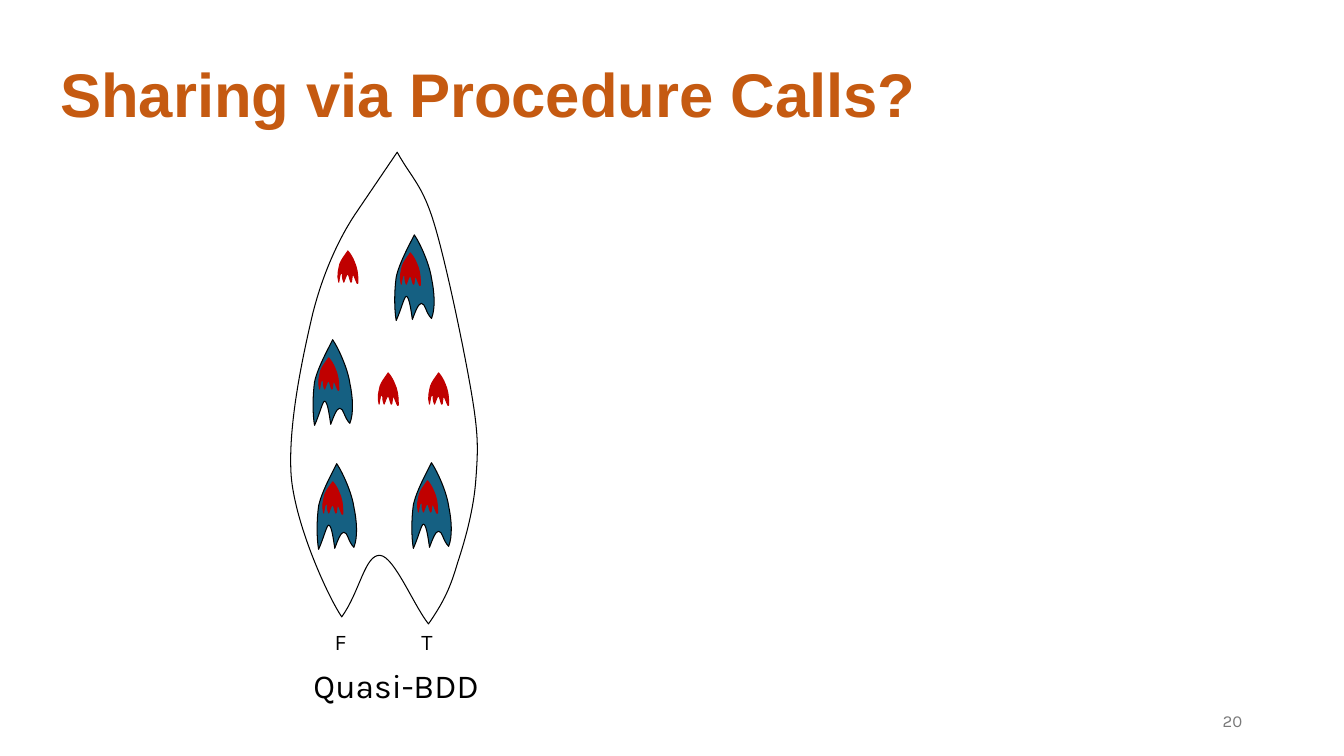
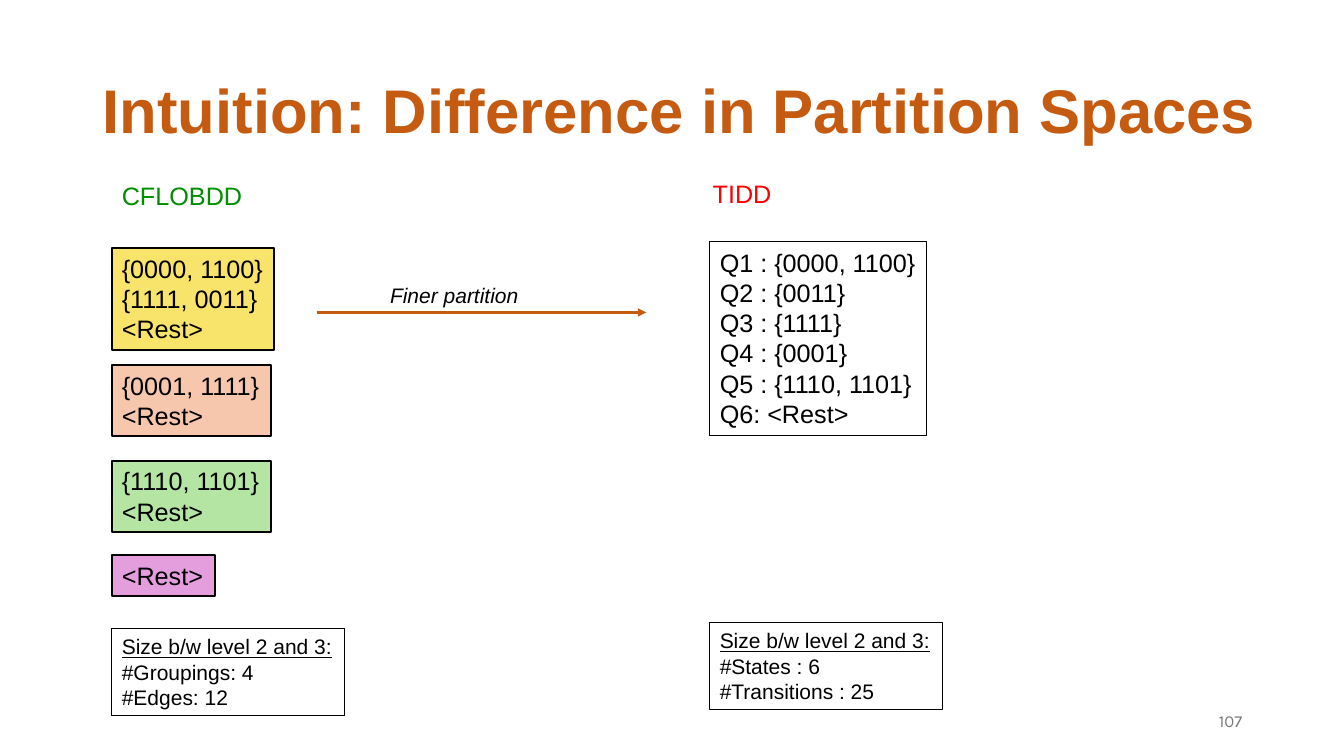
from dataclasses import dataclass, field
from typing import Any, NamedTuple

from lxml import etree
from pptx import Presentation
from pptx.dml.color import RGBColor
from pptx.enum.shapes import MSO_CONNECTOR
from pptx.enum.text import MSO_ANCHOR as ANCHOR, MSO_AUTO_SIZE as AUTO, PP_ALIGN as ALIGN
from pptx.oxml.ns import qn
from pptx.slide import Slide
from pptx.util import Emu, Pt

EMU_PER_PX = 9144  # 100 px to the inch

ORANGE, BLACK, GRAY = "C55A11", "000000", "797979"
GREEN, RED = "008F00", "FF0000"
BLUE, CRIMSON = "156082", "C00000"
SANS, KARLA = "Arial", "Karla"

Point = tuple[int, int]
Curve = tuple[Point, Point, Point]


class Box(NamedTuple):
    left: int
    top: int
    width: int
    height: int


@dataclass
class Label:
    box: Box
    lines: list[str]
    size: int = 18
    color: str = BLACK
    font: str = SANS
    fill: str | None = None
    border: float = 0
    frame: dict[str, Any] = field(
        default_factory=lambda: {"word_wrap": False, "auto_size": AUTO.SHAPE_TO_FIT_TEXT})
    paragraph: dict[str, Any] = field(default_factory=dict)
    style: dict[str, Any] = field(default_factory=dict)
    first_line: dict[str, Any] = field(default_factory=dict)


class Outline(NamedTuple):
    """Closed run of Bezier curves that starts at the tip (0, 0)."""
    curves: list[Curve]
    fill: str | None
    line: str


LEAF = Outline([
    ((0, 0), (-42, 62), (-42, 62)),
    ((-56, 83), (-73, 117), (-84, 161)),
    ((-94, 204), (-109, 273), (-105, 323)),
    ((-100, 373), (-68, 442), (-55, 461)),
    ((-37, 436), (-32, 399), (-17, 400)),
    ((-3, 401), (16, 449), (31, 468)),
    ((47, 445), (53, 431), (60, 407)),
    ((68, 383), (76, 353), (78, 325)),
    ((80, 297), (81, 283), (74, 241)),
    ((67, 199), (49, 112), (37, 72)),
    ((25, 32), (15, 27), (0, 0)),
], None, BLACK)
BUD = Outline([
    ((-5, 10), (-15, 28), (-18, 42)),
    ((-20, 56), (-20, 74), (-18, 85)),
    ((-13, 74), (-10, 61), (-8, 61)),
    ((-5, 61), (-3, 77), (-2, 84)),
    ((1, 76), (4, 68), (7, 68)),
    ((11, 68), (11, 77), (17, 83)),
    ((21, 73), (20, 57), (17, 43)),
    ((15, 29), (6, 9), (0, 0)),
], BLUE, BLACK)
PETAL = Outline([
    ((-4, 6), (-6, 8), (-8, 13)),
    ((-9, 18), (-11, 24), (-9, 31)),
    ((-8, 25), (-8, 22), (-6, 22)),
    ((-4, 21), (-7, 23), (-4, 31)),
    ((-1, 23), (-1, 23), (0, 23)),
    ((1, 23), (2, 29), (3, 31)),
    ((4, 33), (4, 23), (5, 23)),
    ((6, 23), (10, 36), (10, 32)),
    ((10, 28), (10, 21), (8, 15)),
    ((6, 10), (5, 6), (0, 0)),
], CRIMSON, CRIMSON)

LEAF_TIP = (394, 151)
BUD_TIPS = [(411, 233), (330, 337), (334, 460), (428, 459)]
LONE_PETAL_TIPS = [(345, 249), (385, 370), (435, 370)]
PETAL_IN_BUD = (-4, 18)


def px(n: int) -> Emu:
    return Emu(n * EMU_PER_PX)


def rgb(color: str) -> RGBColor:
    return RGBColor.from_string(color)


def apply(target: Any, values: dict[str, Any]) -> None:
    for name, value in values.items():
        setattr(target, name, value)


def paint(sp: Any, fill: str | None, line: str, width: float) -> None:
    if fill:
        sp.fill.solid()
        sp.fill.fore_color.rgb = rgb(fill)
    else:
        sp.fill.background()
    sp.line.color.rgb = rgb(line)
    sp.line.width = Pt(width)


def add_label(s: Slide, label: Label) -> None:
    sp = s.shapes.add_textbox(*map(px, label.box))
    if label.border:
        paint(sp, label.fill, BLACK, label.border)
    tf = sp.text_frame
    apply(tf, label.frame)
    for i, line in enumerate(label.lines):
        p = tf.add_paragraph() if i else tf.paragraphs[0]
        apply(p, label.paragraph)
        r = p.add_run()
        r.text = line
        r.font.color.rgb = rgb(label.color)
        extra = {} if i else label.first_line
        apply(r.font, {"name": label.font, "size": Pt(label.size), **label.style, **extra})


def bend(sp: Any) -> None:
    """Turn each three line segments of a freeform into one cubic curve."""
    geometry = sp._element.find(".//" + qn("a:path"))
    segments = geometry.findall(qn("a:lnTo"))
    for i in range(0, len(segments), 3):
        curve = etree.Element(qn("a:cubicBezTo"))
        segments[i].addprevious(curve)
        for segment in segments[i:i + 3]:
            curve.append(segment[0])
            geometry.remove(segment)


def add_outline(s: Slide, outline: Outline, tip: Point) -> None:
    x, y = tip
    builder = s.shapes.build_freeform(px(x), px(y))
    builder.add_line_segments(
        [(px(x + dx), px(y + dy)) for curve in outline.curves for dx, dy in curve], close=True)
    sp = builder.convert_to_shape()
    bend(sp)
    sp.shadow.inherit = False
    paint(sp, outline.fill, outline.line, 0.75)


def add_arrow(s: Slide, start: Point, end: Point) -> None:
    cx = s.shapes.add_connector(MSO_CONNECTOR.STRAIGHT, *map(px, start + end))
    cx.line.color.rgb = rgb(ORANGE)
    cx.line.width = Pt(1.5)
    props = cx._element.spPr
    etree.SubElement(props.find(qn("a:ln")), qn("a:tailEnd"), type="triangle")
    etree.SubElement(props, qn("a:effectLst"))


def add_page(prs: Any, title: str, title_box: Box, number: int) -> Slide:
    s = prs.slides.add_slide(prs.slide_layouts[6])
    middle = {"word_wrap": True, "vertical_anchor": ANCHOR.MIDDLE}
    add_label(s, Label(title_box, [title], 44, ORANGE, frame=middle,
                       paragraph={"line_spacing": 0.9}, style={"bold": True}))
    add_label(s, Label(Box(942, 695, 300, 40), [str(number)], 12, GRAY, KARLA,
                       frame=middle, paragraph={"alignment": ALIGN.RIGHT}))
    return s


def add_sharing(prs: Any) -> None:
    s = add_page(prs, "Sharing via Procedure Calls?", Box(50, 24, 1275, 145), 20)
    add_outline(s, LEAF, LEAF_TIP)
    for tip in LONE_PETAL_TIPS:
        add_outline(s, PETAL, tip)
    for x, y in BUD_TIPS:
        add_outline(s, BUD, (x, y))
        add_outline(s, PETAL, (x + PETAL_IN_BUD[0], y + PETAL_IN_BUD[1]))
    for box, text, size in [
        (Box(322, 618, 32, 37), "F", 16),
        (Box(408, 618, 31, 37), "T", 16),
        (Box(301, 655, 191, 50), "Quasi-BDD", 24),
    ]:
        add_label(s, Label(box, [text], size, font=KARLA))


def add_partitions(prs: Any) -> None:
    s = add_page(prs, "Intuition: Difference in Partition Spaces", Box(92, 40, 1178, 145), 107)
    left, right = 111, 704
    add_label(s, Label(Box(left, 174, 141, 40), ["CFLOBDD"], color=GREEN))
    add_label(s, Label(Box(697, 172, 79, 40), ["TIDD"], color=RED))

    for top, width, height, fill, lines in [
        (246, 161, 101, "F9E46B", ["{0000, 1100}", "{1111, 0011}", "<Rest>"]),
        (362, 158, 71, "F6C6AD", ["{0001, 1111}", "<Rest>"]),
        (457, 158, 71, "B4E5A2", ["{1110, 1101}", "<Rest>"]),
        (551, 102, 40, "E59EDD", ["<Rest>"]),
    ]:
        add_label(s, Label(Box(left, top, width, height), lines, fill=fill, border=1.5))

    add_label(s, Label(Box(right, 240, 215, 192), [
        "Q1 : {0000, 1100}", "Q2 : {0011}", "Q3 : {1111}",
        "Q4 : {0001}", "Q5 : {1110, 1101}", "Q6: <Rest>",
    ], border=0.75))

    for x, y, counts in [
        (left, 624, ["#Groupings: 4", "#Edges: 12"]),
        (right, 618, ["#States : 6", "#Transitions : 25"]),
    ]:
        add_label(s, Label(Box(x, y, 231, 86), ["Size b/w level 2 and 3:", *counts], 15,
                           border=0.75, first_line={"underline": True}))

    add_arrow(s, (314, 310), (641, 310))
    add_label(s, Label(Box(377, 275, 149, 35), ["Finer partition"], 15, style={"italic": True}))


def main() -> None:
    prs = Presentation()
    prs.slide_width, prs.slide_height = px(1333), px(750)
    add_sharing(prs)
    add_partitions(prs)
    prs.save("out.pptx")


if __name__ == "__main__":
    main()
